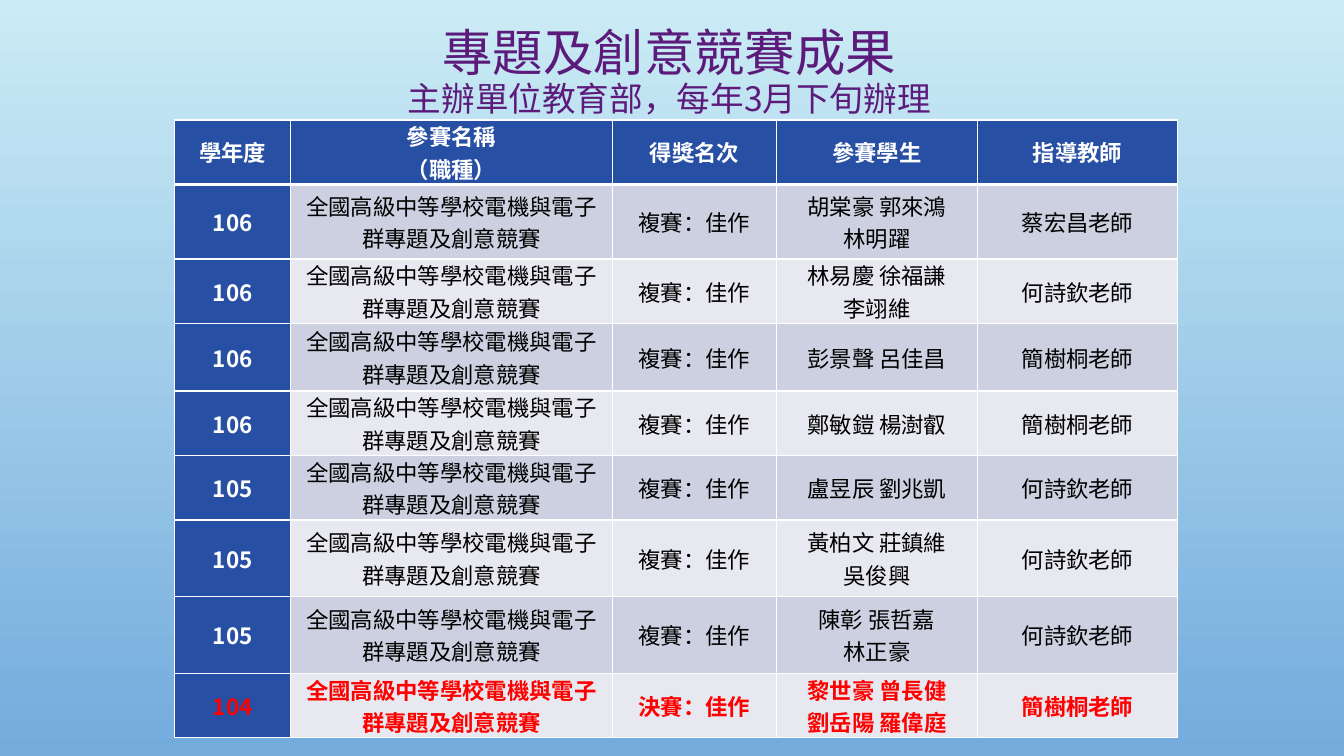
from lxml import etree
from pptx import Presentation
from pptx import util as u
from pptx.dml.color import RGBColor
from pptx.enum import text
from pptx.oxml.ns import qn

FONT = "Noto Sans CJK SC"
COLORS = {
    "sky_top": "CBECF5", "sky_bottom": "73ABDD", "title": "5C1B7B",
    "header": "274FA4", "band_dark": "CDD0E0", "band_light": "E8E9F0",
    "white": "FFFFFF", "black": "000000", "final": "FF0000",
}
WIDTH, HEIGHT = u.Inches(13.33), u.Inches(7.5)

# Table content
CONTEST = "全國高級中等學校電機與電子群專題及創意競賽"
HEADERS = ["學年度", "參賽名稱\n（職種）", "得獎名次", "參賽學生", "指導教師"]
AWARDS = [
    ("106", "複賽：佳作", "胡棠豪 郭來鴻\n林明躍", "蔡宏昌老師"),
    ("106", "複賽：佳作", "林易慶 徐福謙\n李翊維", "何詩欽老師"),
    ("106", "複賽：佳作", "彭景聲 呂佳昌", "簡樹桐老師"),
    ("106", "複賽：佳作", "鄭敏鎧 楊澍叡", "簡樹桐老師"),
    ("105", "複賽：佳作", "盧昱辰 劉兆凱", "何詩欽老師"),
    ("105", "複賽：佳作", "黃柏文 莊鎮維\n吳俊興", "何詩欽老師"),
    ("105", "複賽：佳作", "陳彰 張哲嘉\n林正豪", "何詩欽老師"),
    ("104", "決賽：佳作", "黎世豪 曾長健\n劉岳陽 羅偉庭", "簡樹桐老師"),
]
COLUMN_WIDTHS = [1.15, 3.19, 1.63, 1.99, 1.99]
ROW_HEIGHTS = [0.64, 0.74, 0.64, 0.67, 0.64, 0.64, 0.76, 0.76, 0.64]


def rgb(name):
    return RGBColor.from_string(COLORS[name])


def format_run(r, size, color, bold=False):
    r.font.size = u.Pt(size)
    r.font.bold = bold
    r.font.color.rgb = rgb(color)
    r.font.name = FONT
    east_asian = etree.Element(qn("a:ea"), typeface=FONT)
    r.font._element.find(qn("a:latin")).addnext(east_asian)


def set_background(slide):
    fill = slide.background.fill
    fill.gradient()
    fill.gradient_angle = 270
    for stop, position, color in zip(fill.gradient_stops, (0, 1), ("sky_top", "sky_bottom")):
        stop.position = position
        stop.color.rgb = rgb(color)


def add_title(slide, heading, subtitle):
    sp = slide.shapes.add_textbox(int(WIDTH * 0.073), int(HEIGHT * 0.019),
                                  int(WIDTH * 0.85), int(HEIGHT * 0.155))
    tf = sp.text_frame
    tf.word_wrap = True
    tf.vertical_anchor = text.MSO_ANCHOR.MIDDLE
    p = tf.paragraphs[0]
    p.text = f"{heading}\v{subtitle}"
    p.alignment = text.PP_ALIGN.CENTER
    p.line_spacing = 0.9
    for r, size in zip(p.runs, (36, 24)):
        format_run(r, size, "title")


def set_borders(cell, top, bottom):
    tc_pr = cell._tc.get_or_add_tcPr()
    sides = {"L": 1, "R": 1, "T": top, "B": bottom}
    for i, (side, width) in enumerate(sides.items()):
        line = etree.Element(qn(f"a:ln{side}"), w=str(u.Pt(width)))
        fill = etree.SubElement(line, qn("a:solidFill"))
        etree.SubElement(fill, qn("a:srgbClr"), val=COLORS["white"])
        tc_pr.insert(i, line)


def fill_cell(cell, content, fill, color, bold):
    cell.margin_left = cell.margin_right = u.Inches(0.06)
    cell.margin_top = cell.margin_bottom = 0
    cell.vertical_anchor = text.MSO_ANCHOR.MIDDLE
    cell.fill.solid()
    cell.fill.fore_color.rgb = rgb(fill)
    cell.text_frame.text = content
    for p in cell.text_frame.paragraphs:
        p.alignment = text.PP_ALIGN.CENTER
        for r in p.runs:
            format_run(r, 16, color, bold)


def add_awards_table(slide):
    rows = [HEADERS] + [(year, CONTEST, *rest) for year, *rest in AWARDS]
    frame = slide.shapes.add_table(len(rows), len(HEADERS), int(WIDTH * 0.13), u.Inches(1.19),
                                   u.Inches(sum(COLUMN_WIDTHS)), u.Inches(sum(ROW_HEIGHTS)))
    table = frame.table
    table.first_col = True
    for column, width in zip(table.columns, COLUMN_WIDTHS):
        column.width = u.Inches(width)
    for row, height in zip(table.rows, ROW_HEIGHTS):
        row.height = u.Inches(height)

    for i, row in enumerate(rows):
        band = "band_dark" if i % 2 else "band_light"
        final = i == len(rows) - 1
        for j, content in enumerate(row):
            heading = i == 0 or j == 0
            color = "final" if final else "white" if heading else "black"
            cell = table.cell(i, j)
            fill_cell(cell, content, "header" if heading else band, color, heading or final)
            set_borders(cell, top=3 if i == 1 else 1, bottom=3 if i == 0 else 1)


def main():
    prs = Presentation()
    prs.slide_width, prs.slide_height = WIDTH, HEIGHT
    slide = prs.slides.add_slide(prs.slide_layouts[6])
    set_background(slide)
    add_title(slide, "專題及創意競賽成果", "主辦單位教育部，每年3月下旬辦理")
    add_awards_table(slide)
    prs.save("out.pptx")


if __name__ == "__main__":
    main()
